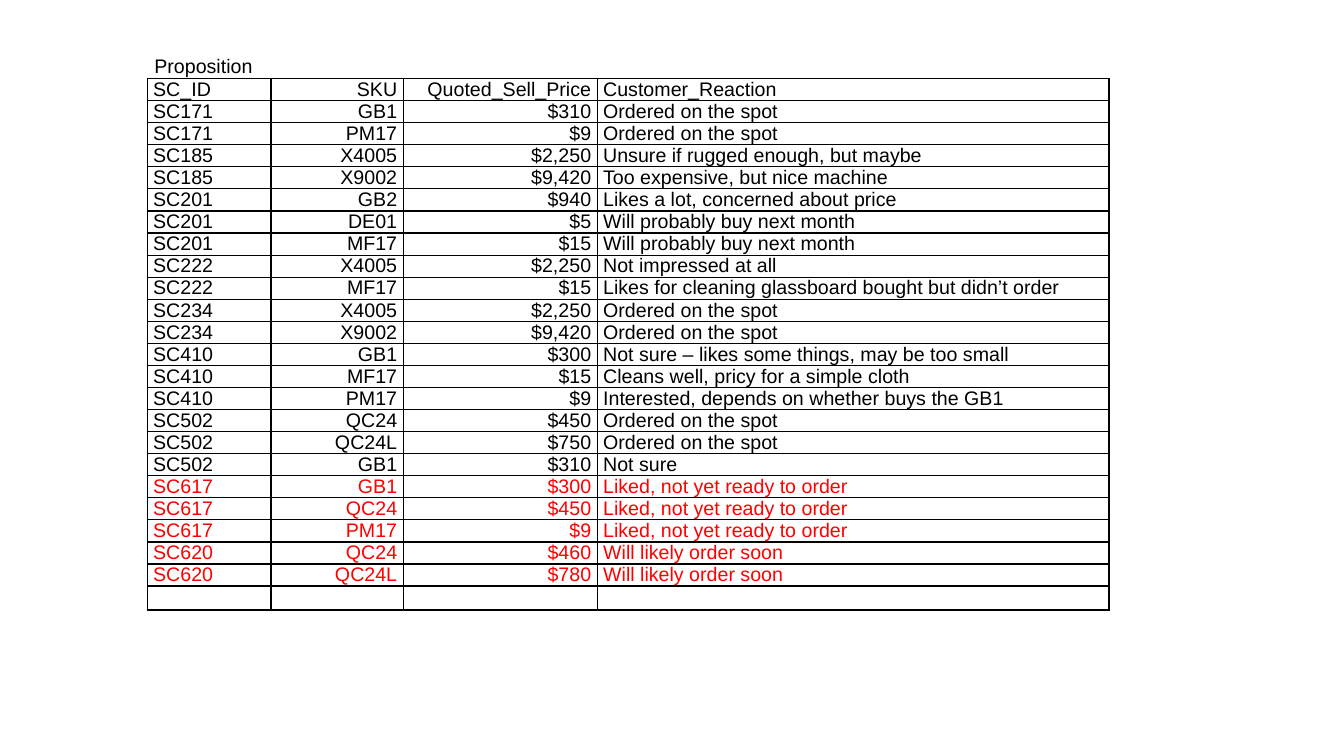
from dataclasses import dataclass
from typing import Any

from lxml.etree import SubElement
from pptx import Presentation
from pptx.dml.color import RGBColor
from pptx.enum.text import MSO_ANCHOR as Anchor, MSO_AUTO_SIZE as AutoSize, PP_ALIGN as Align
from pptx.oxml.ns import qn
from pptx.util import Cm, Pt

COLORS = {"text": "000000", "border": "000000", "new": "FF0000"}
FONT = {"name": "Arial", "size": Pt(14)}
CELL = {"margin_left": Cm(0.15), "margin_right": Cm(0.15), "margin_top": 0, "margin_bottom": 0}
TITLE_FRAME = {
    "word_wrap": False,
    "auto_size": AutoSize.SHAPE_TO_FIT_TEXT,
    "vertical_anchor": Anchor.MIDDLE,
    "margin_left": Cm(0.18),
    "margin_right": Cm(0.18),
    "margin_top": Cm(0.1),
    "margin_bottom": Cm(0.1),
}
LEFT = Cm(3.71)
ROW_HEIGHT = Cm(0.38)


@dataclass(frozen=True)
class Column:
    name: str
    width: float
    align: Align


@dataclass(frozen=True)
class Proposition:
    sc_id: str
    sku: str
    price: int
    reaction: str
    color: str = "text"

    def texts(self) -> list[str]:
        return [self.sc_id, self.sku, f"${self.price:,}", self.reaction]


COLUMNS = [
    Column("SC_ID", 3.12, Align.LEFT),
    Column("SKU", 3.33, Align.RIGHT),
    Column("Quoted_Sell_Price", 4.89, Align.RIGHT),
    Column("Customer_Reaction", 12.9, Align.LEFT),
]

PROPOSITIONS = [
    Proposition("SC171", "GB1", 310, "Ordered on the spot"),
    Proposition("SC171", "PM17", 9, "Ordered on the spot"),
    Proposition("SC185", "X4005", 2250, "Unsure if rugged enough, but maybe"),
    Proposition("SC185", "X9002", 9420, "Too expensive, but nice machine"),
    Proposition("SC201", "GB2", 940, "Likes a lot, concerned about price"),
    Proposition("SC201", "DE01", 5, "Will probably buy next month"),
    Proposition("SC201", "MF17", 15, "Will probably buy next month"),
    Proposition("SC222", "X4005", 2250, "Not impressed at all"),
    Proposition("SC222", "MF17", 15, "Likes for cleaning glassboard bought but didn’t order"),
    Proposition("SC234", "X4005", 2250, "Ordered on the spot"),
    Proposition("SC234", "X9002", 9420, "Ordered on the spot"),
    Proposition("SC410", "GB1", 300, "Not sure – likes some things, may be too small"),
    Proposition("SC410", "MF17", 15, "Cleans well, pricy for a simple cloth"),
    Proposition("SC410", "PM17", 9, "Interested, depends on whether buys the GB1"),
    Proposition("SC502", "QC24", 450, "Ordered on the spot"),
    Proposition("SC502", "QC24L", 750, "Ordered on the spot"),
    Proposition("SC502", "GB1", 310, "Not sure"),
    Proposition("SC617", "GB1", 300, "Liked, not yet ready to order", "new"),
    Proposition("SC617", "QC24", 450, "Liked, not yet ready to order", "new"),
    Proposition("SC617", "PM17", 9, "Liked, not yet ready to order", "new"),
    Proposition("SC620", "QC24", 460, "Will likely order soon", "new"),
    Proposition("SC620", "QC24L", 780, "Will likely order soon", "new"),
]


def apply(target: Any, values: dict[str, Any]) -> None:
    for name, value in values.items():
        setattr(target, name, value)


def write(p: Any, text: str, color: str = "text") -> None:
    if not text:
        SubElement(p._p, qn("a:endParaRPr"), sz=str(int(FONT["size"].pt * 100)))
        return
    r = p.add_run()
    r.text = text
    apply(r.font, FONT)
    r.font.color.rgb = RGBColor.from_string(COLORS[color])


def add_borders(cell: Any) -> None:
    tc_pr = cell._tc.get_or_add_tcPr()
    for side in ("lnL", "lnR", "lnT", "lnB"):
        ln = SubElement(tc_pr, qn(f"a:{side}"), w=str(Pt(1)))
        fill = SubElement(ln, qn("a:solidFill"))
        SubElement(fill, qn("a:srgbClr"), val=COLORS["border"])


def fill_cell(cell: Any, text: str, align: Align, color: str) -> None:
    apply(cell, CELL)
    add_borders(cell)
    cell.fill.background()
    p = cell.text_frame.paragraphs[0]
    p.alignment = align
    write(p, text, color)


def add_propositions(s: Any) -> None:
    rows = [([c.name for c in COLUMNS], "text")]
    rows += [(prop.texts(), prop.color) for prop in PROPOSITIONS]
    rows.append(([""] * len(COLUMNS), "text"))
    width = Cm(sum(c.width for c in COLUMNS))
    frame = s.shapes.add_table(
        len(rows), len(COLUMNS), LEFT, Cm(1.98), width, ROW_HEIGHT * len(rows)
    )
    table = frame.table
    apply(table, {"first_row": False, "horz_banding": False})
    for column, target in zip(COLUMNS, table.columns):
        target.width = Cm(column.width)
    for i, (texts, color) in enumerate(rows):
        table.rows[i].height = ROW_HEIGHT
        for j, (text, column) in enumerate(zip(texts, COLUMNS)):
            fill_cell(table.cell(i, j), text, column.align, color)


def add_title(s: Any) -> None:
    tf = s.shapes.add_textbox(LEFT, Cm(1.27), Cm(2.87), Cm(0.79)).text_frame
    apply(tf, TITLE_FRAME)
    write(tf.paragraphs[0], "Proposition")


def main() -> None:
    prs = Presentation()
    apply(prs, {"slide_width": Cm(33.87), "slide_height": Cm(19.05)})
    s = prs.slides.add_slide(prs.slide_layouts[6])
    add_propositions(s)
    add_title(s)
    prs.save("out.pptx")


if __name__ == "__main__":
    main()
